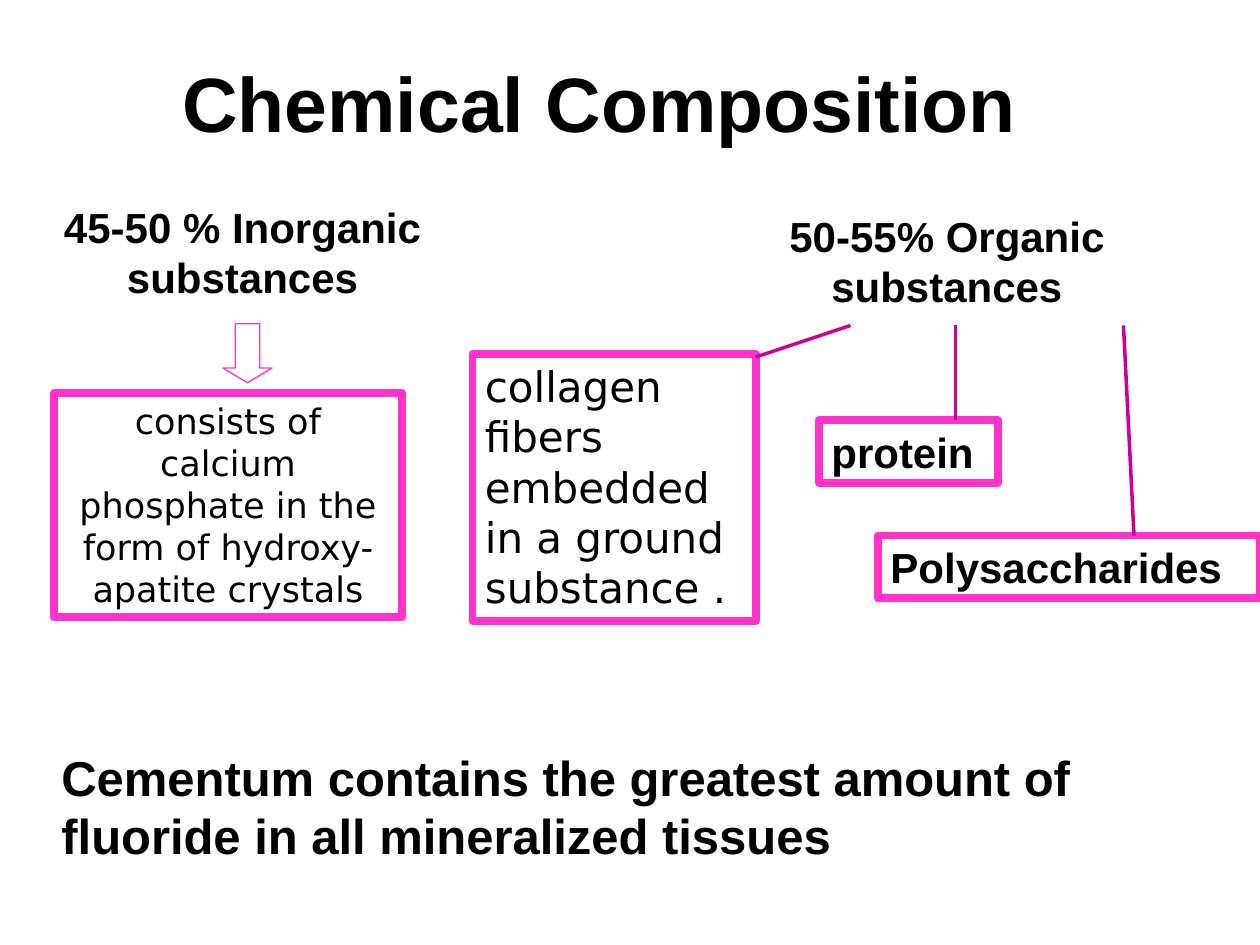
import pptx
import pptx.dml.color
import pptx.enum.shapes
import pptx.enum.text
import pptx.oxml.ns
import pptx.util
from lxml import etree

Pt = pptx.util.Pt
ALIGN = pptx.enum.text.PP_ALIGN
SHAPES = pptx.enum.shapes.MSO_SHAPE
BLACK, PINK, MAGENTA = "000000", "FF33CC", "CC0099"
SANS, WIDE = "Arial", "DejaVu Sans"


def color(value):
    """Return the colour for a hex string."""
    return pptx.dml.color.RGBColor.from_string(value)


def place(shape, left, top, width, height):
    """Set the position and size of a shape in points."""
    shape.left, shape.top = Pt(left), Pt(top)
    shape.width, shape.height = Pt(width), Pt(height)


def write(shape, text, size, font=SANS, align=ALIGN.LEFT,
          anchor=pptx.enum.text.MSO_ANCHOR.TOP):
    """Write one run of black text, bold in the heading font."""
    frame = shape.text_frame
    frame.word_wrap = True
    frame.vertical_anchor = anchor
    paragraph = frame.paragraphs[0]
    paragraph.alignment = align
    run = paragraph.add_run()
    run.text = text
    run.font.name, run.font.size = font, Pt(size)
    run.font.bold = font == SANS
    run.font.color.rgb = color(BLACK)


def add_title(slide, text, bounds):
    """Place and format the title placeholder."""
    title = slide.shapes.title
    place(title, *bounds)
    write(title, text, 44, align=ALIGN.CENTER,
          anchor=pptx.enum.text.MSO_ANCHOR.MIDDLE)


def add_label(slide, text, bounds, size, align=ALIGN.LEFT):
    """Add a text box without an outline."""
    label = slide.shapes.add_textbox(*map(Pt, bounds))
    write(label, text, size, align=align)


def add_outline(slide, kind, bounds, width):
    """Add an unfilled preset shape with a pink outline."""
    shape = slide.shapes.add_shape(kind, *map(Pt, bounds))
    shape.shadow.inherit = False
    shape.fill.background()
    shape.line.color.rgb = color(PINK)
    shape.line.width = Pt(width)
    return shape


def add_box(slide, text, bounds, size, font=SANS, align=ALIGN.LEFT):
    """Add a pink framed box with text."""
    box = add_outline(slide, SHAPES.RECTANGLE, bounds, 4.5)
    write(box, text, size, font, align)


def add_down_arrow(slide, bounds):
    """Add a hollow arrow that points down."""
    arrow = add_outline(slide, SHAPES.DOWN_ARROW, bounds, 0.75)
    arrow.adjustments[0], arrow.adjustments[1] = 0.5, 0.3


def add_branch(slide, start, end):
    """Add a plain line between two points."""
    branch = slide.shapes.add_connector(
        pptx.enum.shapes.MSO_CONNECTOR.STRAIGHT, *map(Pt, start + end))
    branch.line.color.rgb = color(MAGENTA)
    branch.line.width = Pt(2)
    properties = branch._element.spPr
    etree.SubElement(properties, pptx.oxml.ns.qn("a:effectLst"))


def main():
    """Build the slide on chemical composition and save it."""
    presentation = pptx.Presentation()
    presentation.slide_width, presentation.slide_height = Pt(720), Pt(540)
    slide = presentation.slides.add_slide(presentation.slide_layouts[5])

    add_title(slide, "Chemical Composition", (82, 21.6, 521.3, 72.7))
    add_label(slide, "45-50 % Inorganic substances",
              (25.2, 111.6, 226.8, 67.7), 24, ALIGN.CENTER)
    add_label(slide, "50-55% Organic substances",
              (427.7, 116.6, 226.8, 67.7), 24, ALIGN.CENTER)
    add_box(slide, "consists of calcium phosphate in the form of "
            "hydroxy-apatite crystals",
            (31, 224.6, 198.7, 128.2), 20, WIDE, ALIGN.CENTER)
    add_box(slide, "collagen fibers embedded in a ground substance .",
            (270, 202.3, 162, 152.6), 24, WIDE)
    add_box(slide, "protein", (468, 240, 102.2, 36), 24)
    add_box(slide, "Polysaccharides", (501.8, 306, 218.2, 36), 24)
    add_label(slide, "Cementum contains the greatest amount of fluoride "
              "in all mineralized tissues", (28, 423.4, 694.8, 74.2), 28)
    add_down_arrow(slide, (127.4, 185, 28.1, 33.8))

    branches = [((486, 186), (432, 204)),
                ((546, 186), (546, 240)),
                ((642, 186), (648, 306))]
    for start, end in branches:
        add_branch(slide, start, end)
    presentation.save("out.pptx")


if __name__ == "__main__":
    main()
